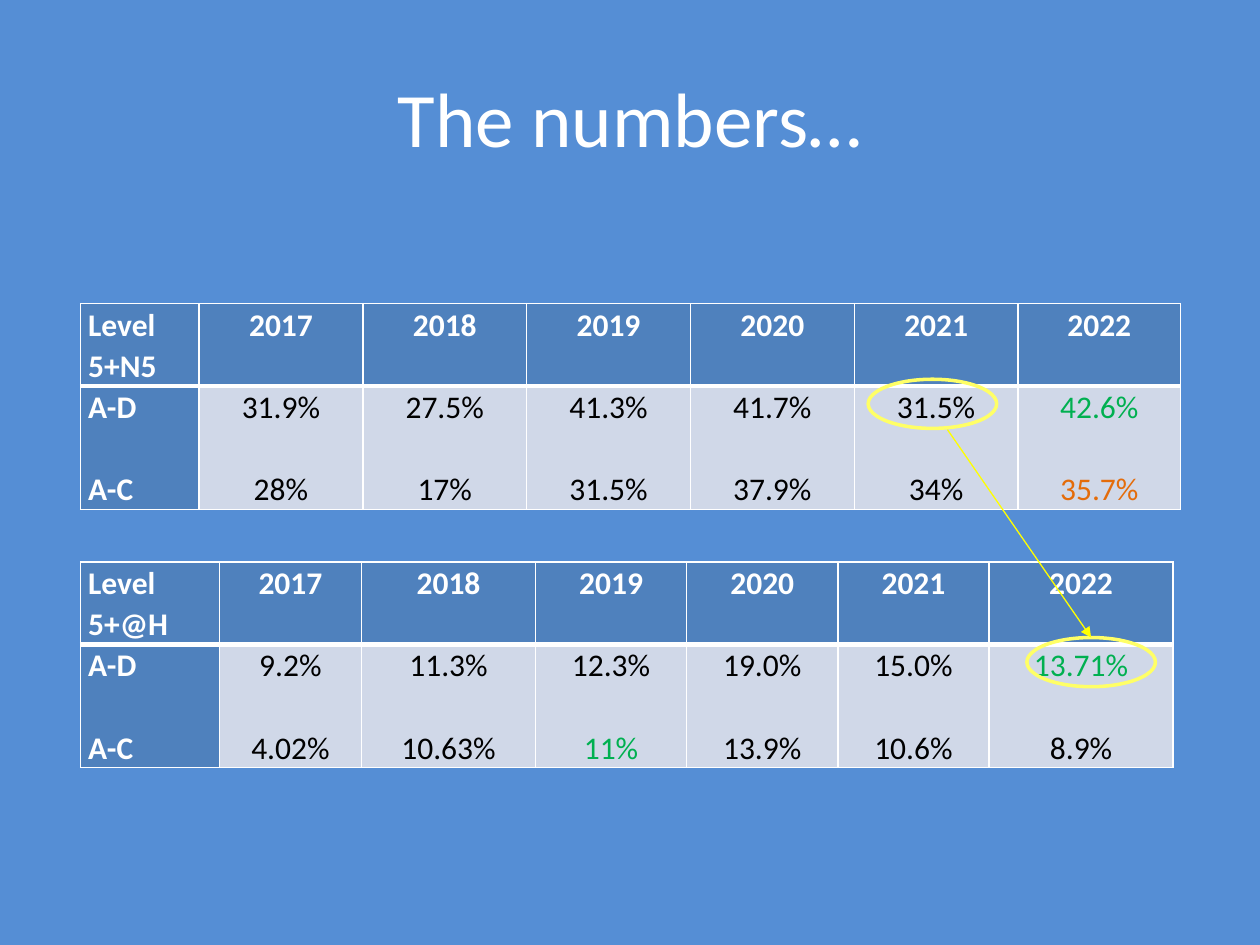
from lxml import etree
from pptx import Presentation
from pptx.dml.color import RGBColor
from pptx.enum.shapes import MSO_CONNECTOR, MSO_SHAPE
from pptx.enum.text import MSO_ANCHOR, PP_ALIGN
from pptx.oxml import parse_xml
from pptx.oxml.ns import nsdecls, qn
from pptx.util import Inches, Pt

SKY = RGBColor(0x55, 0x8E, 0xD5)
HEADER_BLUE = RGBColor(0x4F, 0x81, 0xBD)
PALE_BLUE = RGBColor(0xD0, 0xD8, 0xE8)
WHITE = RGBColor(0xFF, 0xFF, 0xFF)
BLACK = RGBColor(0, 0, 0)
GREEN = RGBColor(0x00, 0xB0, 0x50)
ORANGE = RGBColor(0xE4, 0x6C, 0x0A)
RING_YELLOW = RGBColor(0xFF, 0xFF, 0x66)
ARROW_YELLOW = RGBColor(0xFF, 0xFF, 0x00)

FONT = "Calibri"
YEARS = ["2017", "2018", "2019", "2020", "2021", "2022"]
GRADES = ["A-D", "A-C"]
ROW_HEIGHTS = [0.64, 0.96]
GRADE_GAP = 23.5  # points, one line of table text


def write_para(para, text, size=18, color=BLACK, bold=False,
               align=PP_ALIGN.CENTER, spacing=None, before=None):
    para.alignment = align
    if spacing:
        para.line_spacing = spacing
    if before:
        para.space_before = Pt(before)
    span = para.add_run()
    span.text = text
    span.font.name = FONT
    span.font.size = Pt(size)
    span.font.bold = bold
    span.font.color.rgb = color


def set_borders(cell, top=1, bottom=1):
    props = cell._tc.get_or_add_tcPr()
    widths = {"lnL": 1, "lnR": 1, "lnT": top, "lnB": bottom}
    for place, (side, width) in enumerate(widths.items()):
        props.insert(place, parse_xml(
            f'<a:{side} {nsdecls("a")} w="{Pt(width)}"><a:solidFill>'
            f'<a:srgbClr val="{WHITE}"/></a:solidFill></a:{side}>'))


def fill_cell(cell, lines, fill, colors, gap=None, **text_format):
    cell.margin_left = cell.margin_right = Inches(0.06)
    cell.margin_top = cell.margin_bottom = 0
    cell.fill.solid()
    cell.fill.fore_color.rgb = fill
    frame = cell.text_frame
    for index, (line, color) in enumerate(zip(lines, colors)):
        para = frame.add_paragraph() if index else frame.paragraphs[0]
        write_para(para, line, color=color, spacing=1.07,
                   before=gap if index else None, **text_format)


def add_title(page, text, left, top, width, height):
    title = page.shapes.title
    title.left, title.top = Inches(left), Inches(top)
    title.width, title.height = Inches(width), Inches(height)
    title.text_frame.vertical_anchor = MSO_ANCHOR.MIDDLE
    write_para(title.text_frame.paragraphs[0], text, size=44, color=WHITE)


def add_results(page, left, top, widths, level, results, highlights):
    """Place a results table; highlights maps (year, grade) to a colour."""
    table = page.shapes.add_table(
        2, len(widths), Inches(left), Inches(top),
        Inches(sum(widths)), Inches(sum(ROW_HEIGHTS))).table
    for column, width in zip(table.columns, widths):
        column.width = Inches(width)
    for row, height in zip(table.rows, ROW_HEIGHTS):
        row.height = Inches(height)

    # Row labels
    label = {"bold": True, "align": PP_ALIGN.LEFT}
    fill_cell(table.cell(0, 0), level, HEADER_BLUE, [WHITE] * 2, **label)
    fill_cell(table.cell(1, 0), GRADES, HEADER_BLUE, [WHITE] * 2,
              gap=GRADE_GAP, **label)

    # One column for each year
    for index, (year, values) in enumerate(zip(YEARS, results), start=1):
        colors = [highlights.get((year, grade), BLACK) for grade in GRADES]
        fill_cell(table.cell(0, index), [year], HEADER_BLUE, [WHITE], bold=True)
        fill_cell(table.cell(1, index), values, PALE_BLUE, colors, gap=GRADE_GAP)

    for index in range(len(widths)):
        set_borders(table.cell(0, index), bottom=3)
        set_borders(table.cell(1, index), top=3)


def add_ring(page, left, top):
    ring = page.shapes.add_shape(MSO_SHAPE.OVAL, Inches(left), Inches(top),
                                 Inches(1.02), Inches(0.39))
    ring.shadow.inherit = False
    ring.fill.background()
    ring.line.color.rgb = RING_YELLOW
    ring.line.width = Pt(2)
    return ring


def add_arrow(page, left, top, target):
    arrow = page.shapes.add_connector(
        MSO_CONNECTOR.STRAIGHT, Inches(left), Inches(top),
        target.left + target.width // 2, target.top)
    arrow.end_connect(target, 0)
    arrow.line.color.rgb = ARROW_YELLOW
    arrow.line.width = Pt(0.75)
    etree.SubElement(arrow.line._get_or_add_ln(), qn("a:tailEnd"), type="triangle")
    etree.SubElement(arrow._element.spPr, qn("a:effectLst"))


def main():
    deck = Presentation()
    deck.slide_width, deck.slide_height = Inches(10), Inches(7.5)
    page = deck.slides.add_slide(deck.slide_layouts[5])
    page.background.fill.solid()
    page.background.fill.fore_color.rgb = SKY

    add_title(page, "The numbers…", 0.5, 0.3, 9, 1.25)

    # Level 5 and National 5 results
    add_results(
        page, 0.64, 2.41, [0.94] + [1.3] * 5 + [1.29], ["Level 5+N5"],
        [("31.9%", "28%"), ("27.5%", "17%"), ("41.3%", "31.5%"),
         ("41.7%", "37.9%"), ("31.5%", "34%"), ("42.6%", "35.7%")],
        {("2022", "A-D"): GREEN, ("2022", "A-C"): ORANGE})

    # Higher results
    add_results(
        page, 0.64, 4.46, [1.1, 1.13, 1.38, 1.2, 1.2, 1.2, 1.46],
        ["Level", "5+@H"],
        [("9.2%", "4.02%"), ("11.3%", "10.63%"), ("12.3%", "11%"),
         ("19.0%", "13.9%"), ("15.0%", "10.6%"), ("13.71%", "8.9%")],
        {("2019", "A-C"): GREEN, ("2022", "A-D"): GREEN})

    # Link between the two years
    add_ring(page, 6.89, 3.01)
    higher_ring = add_ring(page, 8.15, 5.06)
    add_arrow(page, 7.52, 3.41, higher_ring)

    deck.save("out.pptx")


if __name__ == "__main__":
    main()
